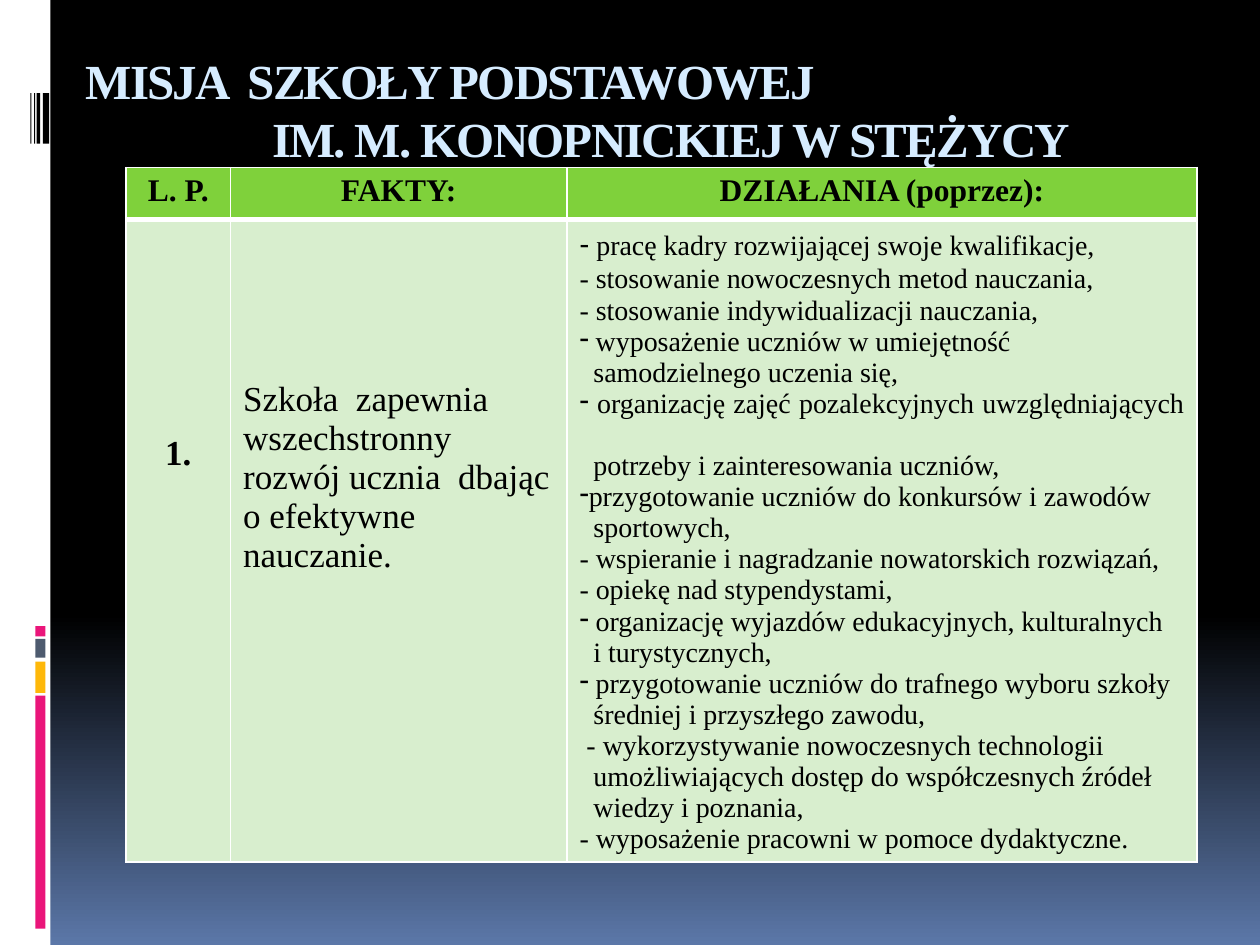
"""Build the school mission slide with its table of facts and actions."""
from lxml import etree
from pptx import Presentation, util as u
from pptx.dml.color import RGBColor
from pptx.enum import shapes, text
from pptx.oxml.ns import qn

HUE = dict(black="000000", white="FFFFFF", pink="EA157A", gold="FEB80A",
           slate="4E5B6F", sky="D6ECFF", dusk="5B77A8", head="7FD13B", pale="D8EECE")
FONT = "Times New Roman"
WIDE, HIGH = 10, 7.5

TITLE = [("MISJA  SZKOŁY PODSTAWOWEJ", 0), ("IM. M. KONOPNICKIEJ W STĘŻYCY", 1.48)]
HEADS = ["L. P.", "FAKTY:", "DZIAŁANIA (poprzez):"]
FACT = "Szkoła  zapewnia wszechstronny rozwój ucznia  dbając o efektywne nauczanie."
DEEDS = [
    ("", "pracę kadry rozwijającej swoje kwalifikacje, "),
    ("", "- stosowanie nowoczesnych metod nauczania,"),
    ("", "- stosowanie indywidualizacji nauczania,"),
    ("-", " wyposażenie uczniów w umiejętność "),
    ("", "  samodzielnego uczenia się,"),
    ("-", " organizację zajęć pozalekcyjnych uwzględniających  "),
    ("", "  potrzeby i zainteresowania uczniów,"),
    ("-", "przygotowanie uczniów do konkursów i zawodów "),
    ("", "  sportowych,"),
    ("", "- wspieranie i nagradzanie nowatorskich rozwiązań,"),
    ("", "- opiekę nad stypendystami,"),
    ("-", " organizację wyjazdów edukacyjnych, kulturalnych   "),
    ("", "  i turystycznych,"),
    ("-", " przygotowanie uczniów do trafnego wyboru szkoły "),
    ("", "  średniej i przyszłego zawodu,"),
    ("", " - wykorzystywanie nowoczesnych technologii "),
    ("", "  umożliwiających dostęp do współczesnych źródeł  "),
    ("", "  wiedzy i poznania,"),
    ("", "- wyposażenie pracowni w pomoce dydaktyczne."),
]
COLS, ROWS = [0.83, 2.67, 5], [0.41, 5.1]
BLOCKS = [(5.52, 1.85, "pink"), (5.25, 0.25, "gold"),
          (5.07, 0.15, "slate"), (4.97, 0.08, "pink")]
BARS = [(0.34, 0.05), (0.29, 0.03), (0.27, 0.01), (0.24, 0.01)]
ALIGN = dict(l=text.PP_ALIGN.LEFT, c=text.PP_ALIGN.CENTER, j=text.PP_ALIGN.JUSTIFY)


def rgb(name):
    return RGBColor.from_string(HUE[name])


def write(para, words, size=18, hue="black", bold=False, font=FONT, align="l"):
    para.alignment = ALIGN[align]
    run = para.add_run()
    run.text = words
    face = run.font
    face.size, face.bold, face.name = u.Pt(size), bold, font
    face.color.rgb = rgb(hue)
    return run


def style(para, mark="", left=0):
    props = para._p.get_or_add_pPr()
    props.set("marL", str(u.Inches(left)))
    props.set("indent", "0")
    if mark:
        etree.SubElement(props, qn("a:buFontTx"))
        etree.SubElement(props, qn("a:buChar")).set("char", mark)
    else:
        etree.SubElement(props, qn("a:buNone"))


def box(slide, left, top, wide, high, hue):
    item = slide.shapes.add_shape(shapes.MSO_SHAPE.RECTANGLE,
                                  *map(u.Inches, (left, top, wide, high)))
    item.shadow.inherit = False
    item.fill.solid()
    item.fill.fore_color.rgb = rgb(hue)
    item.line.fill.background()


def paint(cell, row):
    cell.fill.solid()
    cell.fill.fore_color.rgb = rgb("pale" if row else "head")
    props = cell._tc.get_or_add_tcPr()
    for spot, side in enumerate("LRTB"):
        thick = 3 if (row, side) in [(0, "B"), (1, "T")] else 1
        line = etree.Element(qn("a:ln" + side), w=str(u.Pt(thick)))
        fill = etree.SubElement(line, qn("a:solidFill"))
        etree.SubElement(fill, qn("a:srgbClr")).set("val", HUE["white"])
        props.insert(spot, line)


def add_title(slide):
    title = slide.shapes.title
    title.left, title.top, title.width, title.height = map(u.Inches, (0.58, 0.4, 9.17, 0.93))
    frame = title.text_frame
    frame.word_wrap = True
    frame.auto_size = text.MSO_AUTO_SIZE.NONE
    frame.vertical_anchor = text.MSO_ANCHOR.TOP
    frame.margin_top = frame.margin_bottom = 0
    for i, (words, left) in enumerate(TITLE):
        para = frame.add_paragraph() if i else frame.paragraphs[0]
        para.line_spacing, para.space_before = u.Pt(33.5), u.Pt(0)
        style(para, left=left)
        run = write(para, words, size=28, hue="sky", bold=True)
        run.font._element.set("spc", "-100")


def add_grid(slide):
    grid = slide.shapes.add_table(2, 3, *map(u.Inches, (1, 1.33, sum(COLS), sum(ROWS)))).table
    for col, wide in zip(grid.columns, COLS):
        col.width = u.Inches(wide)
    for r, high in enumerate(ROWS):
        grid.rows[r].height = u.Inches(high)
        for c in range(len(COLS)):
            paint(grid.cell(r, c), r)
    for c, words in enumerate(HEADS):
        write(grid.cell(0, c).text_frame.paragraphs[0], words, bold=True, align="c")
    rank, fact, deeds = (grid.cell(1, c) for c in range(3))
    rank.margin_top, fact.margin_top = u.Inches(1.71), u.Inches(1.28)
    write(rank.text_frame.paragraphs[0], "1.", size=20, bold=True, align="c")
    write(fact.text_frame.paragraphs[0], FACT, size=20)
    frame = deeds.text_frame
    for i, (mark, words) in enumerate(DEEDS):
        para = frame.add_paragraph() if i else frame.paragraphs[0]
        style(para, mark)
        if not i:
            write(para, "- ", font="Calibri", align="j")
        write(para, words, size=16, align="l" if i == len(DEEDS) - 1 else "j")


def main():
    deck = Presentation()
    deck.slide_width, deck.slide_height = u.Inches(WIDE), u.Inches(HIGH)
    slide = deck.slides.add_slide(deck.slide_layouts[5])
    back = slide.background.fill
    back.gradient()
    back.gradient_angle = 270
    for stop, place, hue in zip(back.gradient_stops, (0.65, 1), ("black", "dusk")):
        stop.position, stop.color.rgb = place, rgb(hue)
    box(slide, 0, 0, 0.4, HIGH, "white")
    for top, high, hue in BLOCKS:
        box(slide, 0.28, top, 0.08, high, hue)
    for left, wide in BARS:
        box(slide, left, 0.74, wide, 0.4, "black")
    add_title(slide)
    add_grid(slide)
    deck.save("out.pptx")


if __name__ == "__main__":
    main()
